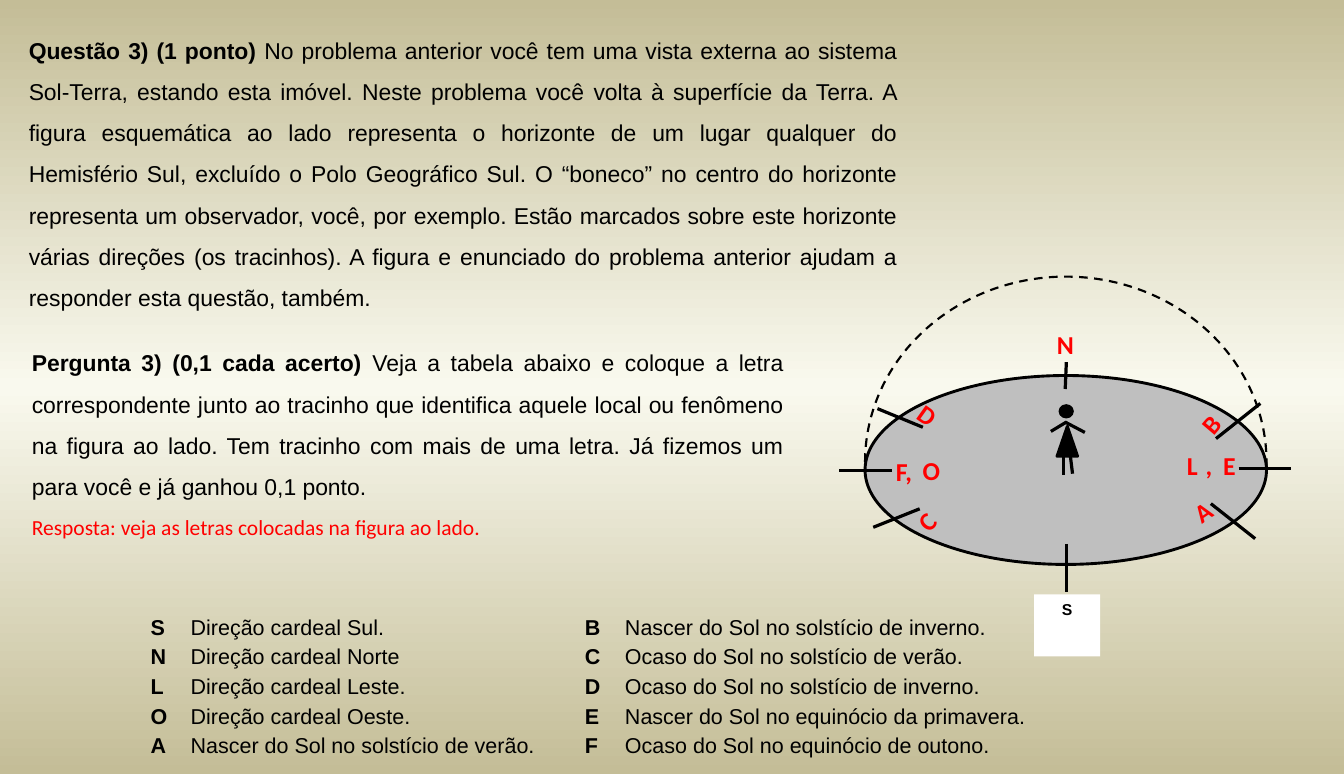
from copy import deepcopy

from lxml import etree
from pptx import Presentation
from pptx.dml.color import RGBColor
from pptx.enum.dml import MSO_LINE
from pptx.enum.shapes import MSO_CONNECTOR, MSO_SHAPE
from pptx.enum.text import MSO_ANCHOR, PP_ALIGN
from pptx.oxml.ns import qn
from pptx.util import Pt

BLACK = RGBColor(0x00, 0x00, 0x00)
WHITE = RGBColor(0xFF, 0xFF, 0xFF)
RED = RGBColor(0xFF, 0x00, 0x00)
GREY = RGBColor(0xBF, 0xBF, 0xBF)
KHAKI = RGBColor(0xC4, 0xBD, 0x97)
CREAM = RGBColor(0xF9, 0xF9, 0xEE)

JUSTIFY, CENTER = PP_ALIGN.JUSTIFY, PP_ALIGN.CENTER
TOP = MSO_ANCHOR.TOP
OVAL, TRIANGLE = MSO_SHAPE.OVAL, MSO_SHAPE.ISOSCELES_TRIANGLE
RECTANGLE, ARC = MSO_SHAPE.RECTANGLE, MSO_SHAPE.ARC
STRAIGHT, DASH = MSO_CONNECTOR.STRAIGHT, MSO_LINE.DASH
NO_STYLE_NO_GRID = "{2D5ABB26-0587-4C30-8999-92F81FD0307C}"

QUESTION = (
    "Questão 3) (1 ponto) ",
    "No problema anterior você tem uma vista externa ao sistema Sol-Terra, "
    "estando esta imóvel. Neste problema você volta à superfície da Terra. "
    "A figura esquemática ao lado representa o horizonte de um lugar qualquer "
    "do Hemisfério Sul, excluído o Polo Geográfico Sul. O “boneco” no centro "
    "do horizonte representa um observador, você, por exemplo. Estão marcados "
    "sobre este horizonte várias direções (os tracinhos). A figura e enunciado "
    "do problema anterior ajudam a responder esta questão, também.",
)
TASK = (
    "Pergunta 3) (0,1 cada acerto) ",
    "Veja a tabela abaixo e coloque a letra correspondente junto ao tracinho "
    "que identifica aquele local ou fenômeno na figura ao lado. Tem tracinho "
    "com mais de uma letra. Já fizemos um para você e já ganhou 0,1 ponto.",
)
ANSWER = "Resposta: veja as letras colocadas na figura ao lado."

LEGEND = [
    ("S", "Direção cardeal Sul.", "B", "Nascer do Sol no solstício de inverno."),
    ("N", "Direção cardeal Norte", "C", "Ocaso do Sol no solstício de verão."),
    ("L", "Direção cardeal Leste.", "D", "Ocaso do Sol no solstício de inverno."),
    ("O", "Direção cardeal Oeste.", "E", "Nascer do Sol no equinócio da primavera."),
    ("A", "Nascer do Sol no solstício de verão.", "F", "Ocaso do Sol no equinócio de outono."),
]
LEGEND_WIDTHS = (28, 275, 28, 314.7)
LEGEND_ROW = 19.4

OBSERVER_LIMBS = [
    (743, 294.5, 756.7, 301.7),
    (743.8, 294.5, 733, 301),
    (746.6, 318.2, 748.1, 330.5),
    (741.6, 318.2, 741.6, 331.2),
]
HORIZON_TICKS = [
    (609.1, 367.9, 641.5, 355),
    (844.6, 351.4, 875.5, 375.8),
    (612, 285.1, 643.7, 298.1),
    (848.2, 306, 879.1, 281.5),
    (585.4, 328.3, 622.1, 328.3),
    (864, 326.9, 900.7, 326.9),
    (743.8, 379.4, 743.8, 413.3),
    (743.8, 252.7, 743, 271.4),
]
DIRECTION_LETTERS = [
    ("N", 730.1, 226.1, 26.6, 0),
    ("L", 820.8, 310.3, 22.3, 0),
    (",", 833.8, 310.3, 18.7, 0),
    ("E", 846, 310.3, 23, 0),
    ("F,", 617.8, 314.6, 25.9, 0),
    ("O", 636.5, 313.9, 26.6, 0),
    ("A", 825.1, 338.4, 38.9, 325.8),
    ("B", 831.6, 280.1, 28.1, 310.4),
    ("C", 632.9, 345.6, 33.8, 313.9),
    ("D", 633.6, 277.2, 33.8, 35.4),
]


def style_run(run, size, color=BLACK, bold=False, font="Arial"):
    run.font.name = font
    run.font.size = Pt(size)
    run.font.bold = bold
    run.font.color.rgb = color


def paint_background(slide):
    fill = slide.background.fill
    fill.gradient()
    fill.gradient_angle = 270
    stop_list = slide.element.find(".//" + qn("a:gsLst"))
    stop_list.append(deepcopy(stop_list[0]))
    for stop, position, color in zip(
        fill.gradient_stops, (0, 0.5, 1), (KHAKI, CREAM, KHAKI)
    ):
        stop.position = position
        stop.color.rgb = color


def add_text(slide, box, text, size, color, bold, font, wrap):
    label = slide.shapes.add_textbox(*map(Pt, box))
    label.text_frame.word_wrap = wrap
    label.text_frame.text = text
    style_run(label.text_frame.paragraphs[0].runs[0], size, color, bold, font)
    return label


def add_statement(slide, box, heading, body):
    statement = add_text(slide, box, heading, 16, BLACK, True, "Arial", True)
    paragraph = statement.text_frame.paragraphs[0]
    paragraph.alignment = JUSTIFY
    paragraph.line_spacing = 1.5
    body_run = paragraph.add_run()
    body_run.text = body
    style_run(body_run, 16)


def add_figure(slide, kind, box, fill=None, line_width=None):
    figure = slide.shapes.add_shape(kind, *map(Pt, box))
    figure.shadow.inherit = False
    if fill is None:
        figure.fill.background()
    else:
        figure.fill.solid()
        figure.fill.fore_color.rgb = fill
    if line_width is None:
        figure.line.fill.background()
    else:
        figure.line.color.rgb = BLACK
        figure.line.width = Pt(line_width)
    return figure


def add_stroke(slide, ends):
    stroke = slide.shapes.add_connector(STRAIGHT, *map(Pt, ends))
    stroke.line.color.rgb = BLACK
    stroke.line.width = Pt(2.25)
    etree.SubElement(stroke._element.spPr, qn("a:effectLst"))


def add_south_sign(slide):
    sign = add_figure(slide, RECTANGLE, (721.4, 414.7, 46, 43.2), WHITE)
    sign.text_frame.vertical_anchor = TOP
    sign.text_frame.text = "S"
    paragraph = sign.text_frame.paragraphs[0]
    paragraph.alignment = CENTER
    paragraph.space_after = Pt(10)
    style_run(paragraph.runs[0], 11, bold=True)


def add_legend(slide):
    box = (100, 427, sum(LEGEND_WIDTHS), LEGEND_ROW * len(LEGEND))
    legend = slide.shapes.add_table(
        len(LEGEND), len(LEGEND_WIDTHS), *map(Pt, box)
    ).table
    legend.first_row = legend.horz_banding = False
    legend._tbl.tblPr.find(qn("a:tableStyleId")).text = NO_STYLE_NO_GRID
    for column, width in zip(legend.columns, LEGEND_WIDTHS):
        column.width = Pt(width)
    for row, entries in enumerate(LEGEND):
        for col, entry in enumerate(entries):
            cell = legend.cell(row, col)
            cell.fill.background()
            cell.margin_left = cell.margin_right = Pt(5)
            cell.margin_top = cell.margin_bottom = 0
            cell.text_frame.text = entry
            paragraph = cell.text_frame.paragraphs[0]
            paragraph.line_spacing = 1.15
            style_run(paragraph.runs[0], 15, bold=col % 2 == 0)


def add_horizon(slide):
    add_south_sign(slide)
    add_figure(slide, OVAL, (603.4, 262, 280, 131.8), GREY, 2)
    sky = add_figure(slide, ARC, (603.4, 193, 280, 258.5), line_width=1.5)
    sky.line.dash_style = DASH
    sky.adjustments[0] = 108
    sky.adjustments[1] = 1.2
    add_figure(slide, OVAL, (739.4, 283, 8.6, 7.9), BLACK, 2)
    add_figure(slide, TRIANGLE, (737.3, 297.4, 14.4, 20.9), BLACK, 2)
    for ends in OBSERVER_LIMBS + HORIZON_TICKS:
        add_stroke(slide, ends)
    for letter, left, top, width, angle in DIRECTION_LETTERS:
        label = add_text(slide, (left, top, width, 28.8), letter, 18, RED,
                         True, "Calibri", angle != 0)
        label.rotation = angle


def main():
    prs = Presentation()
    prs.slide_width, prs.slide_height = Pt(937.44), Pt(540)
    slide = prs.slides.add_slide(prs.slide_layouts[6])
    paint_background(slide)
    add_statement(slide, (13, 12.2, 620, 207.4), *QUESTION)
    add_statement(slide, (15.1, 230.4, 538.6, 123.8), *TASK)
    add_text(slide, (15.1, 355, 329.8, 25.2), ANSWER, 15, RED, False, "Calibri", False)
    add_legend(slide)
    add_horizon(slide)
    prs.save("out.pptx")


if __name__ == "__main__":
    main()
